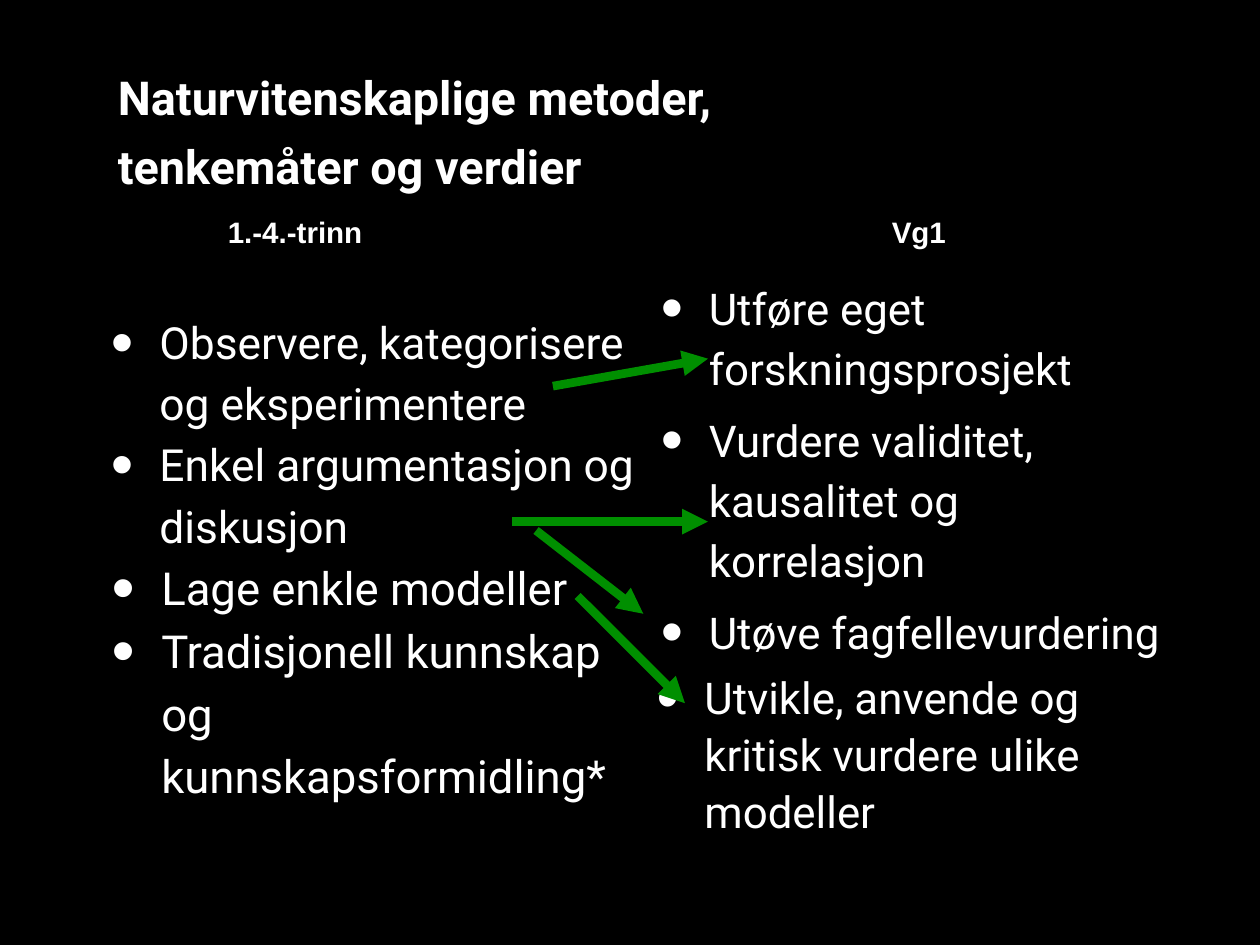
from lxml.etree import SubElement
from pptx import Presentation
from pptx.dml.color import RGBColor
from pptx.enum.shapes import MSO_CONNECTOR
from pptx.enum.text import MSO_ANCHOR, MSO_AUTO_SIZE, PP_ALIGN
from pptx.oxml.ns import qn
from pptx.util import Inches, Pt

COLORS = {"background": "000000", "text": "FFFFFF", "arrow": "008F00"}

TITLE_LINES = ["Naturvitenskaplige metoder,", "tenkemåter og verdier"]

# Each list item: text, size, indent, hanging, line spacing, space before
PRIMARY_GOALS = [
    ("Observere, kategorisere og eksperimentere", 36, 0.7, 0.55, 1.15, 0),
    ("Enkel argumentasjon og diskusjon", 36, 0.7, 0.55, 1.15, 0),
    ("Lage enkle modeller", 37, 0.72, 0.56, 1.15, 0),
    ("Tradisjonell kunnskap og kunnskapsformidling*", 37, 0.72, 0.56, 1.15, 0),
]
VG1_GOALS = [
    ("Utføre eget forskningsprosjekt", 35.6, 0.59, 0.54, 1.15, 9),
    ("Vurdere validitet, kausalitet og korrelasjon", 35.6, 0.59, 0.54, 1.15, 9),
    ("Utøve fagfellevurdering", 35.6, 0.59, 0.54, 1.15, 9),
    ("Utvikle, anvende og kritisk vurdere ulike modeller", 35.6, 0.54, 0.54, 1.08, 7),
]
PROGRESSIONS = [
    ((6.24, 4.36), (7.99, 4.05)),
    ((5.78, 5.89), (7.99, 5.89)),
    ((6.05, 5.99), (7.26, 6.93)),
    ((6.52, 6.73), (7.73, 7.94)),
]


def color(name):
    return RGBColor.from_string(COLORS[name])


def place(holder, left, top, width, height):
    holder.left, holder.top = Inches(left), Inches(top)
    holder.width, holder.height = Inches(width), Inches(height)


def fill_frame(frame, lines, wrap=True):
    """Write one paragraph per line in a middle-anchored frame."""
    frame.text = "\n".join(lines)
    frame.word_wrap = wrap
    frame.auto_size = MSO_AUTO_SIZE.NONE
    frame.vertical_anchor = MSO_ANCHOR.MIDDLE
    frame.margin_left = frame.margin_right = Inches(0.06)
    frame.margin_top = frame.margin_bottom = Inches(0.06)
    return frame.paragraphs


def format_paragraph(paragraph, size, font_name="Roboto", bold=False,
                     align=PP_ALIGN.LEFT, spacing=1.0, before=0):
    paragraph.alignment = align
    paragraph.line_spacing = spacing
    paragraph.space_before = Pt(before)
    for run in paragraph.runs:
        run.font.size = Pt(size)
        run.font.name = font_name
        run.font.bold = bold
        run.font.color.rgb = color("text")


def indent(paragraph, left, hanging):
    properties = paragraph._p.get_or_add_pPr()
    properties.set("marL", str(Inches(left)))
    properties.set("indent", str(-Inches(hanging)))
    return properties


def write_title(title):
    place(title, 1.04, 0.28, 12.14, 2.36)
    for paragraph in fill_frame(title.text_frame, TITLE_LINES):
        format_paragraph(paragraph, 38, bold=True, spacing=1.08, before=7)
        indent(paragraph, 0.47, 0.24)


def write_goals(body, goals):
    paragraphs = fill_frame(body.text_frame, [goal[0] for goal in goals])
    for paragraph, (_, size, left, hanging, spacing, before) in zip(paragraphs, goals):
        format_paragraph(paragraph, size, spacing=spacing, before=before)
        properties = indent(paragraph, left, hanging)
        SubElement(properties, qn("a:buSzPct"), val="145000")
        SubElement(properties, qn("a:buFont"), typeface="Arial")
        SubElement(properties, qn("a:buChar"), char="•")


def add_level_heading(slide, text, left, width):
    heading = slide.shapes.add_textbox(
        Inches(left), Inches(2.37), Inches(width), Inches(0.5))
    for paragraph in fill_frame(heading.text_frame, [text], wrap=False):
        format_paragraph(paragraph, 24, "Arial", bold=True, align=PP_ALIGN.CENTER)


def add_arrow(slide, start, end):
    arrow = slide.shapes.add_connector(
        MSO_CONNECTOR.STRAIGHT, *map(Inches, start + end))
    arrow.line.color.rgb = color("arrow")
    arrow.line.width = Pt(7)
    SubElement(arrow.line._get_or_add_ln(), qn("a:tailEnd"), type="triangle")
    SubElement(arrow._element.spPr, qn("a:effectLst"))


def main():
    presentation = Presentation()
    presentation.slide_width = Inches(14.22)
    presentation.slide_height = Inches(10.67)
    slide = presentation.slides.add_slide(
        presentation.slide_layouts.get_by_name("Two Content"))
    slide.background.fill.solid()
    slide.background.fill.fore_color.rgb = color("background")

    title, primary_body, vg1_body = list(slide.placeholders)[:3]
    write_title(title)
    place(primary_body, 1.04, 2.83, 6.3, 6.88)
    write_goals(primary_body, PRIMARY_GOALS)
    place(vg1_body, 7.35, 2.83, 5.83, 6.88)
    write_goals(vg1_body, VG1_GOALS)

    add_level_heading(slide, "1.-4.-trinn", 2.49, 1.68)
    add_level_heading(slide, "Vg1", 9.75, 1.24)
    for start, end in PROGRESSIONS:
        add_arrow(slide, start, end)

    presentation.save("out.pptx")


if __name__ == "__main__":
    main()
